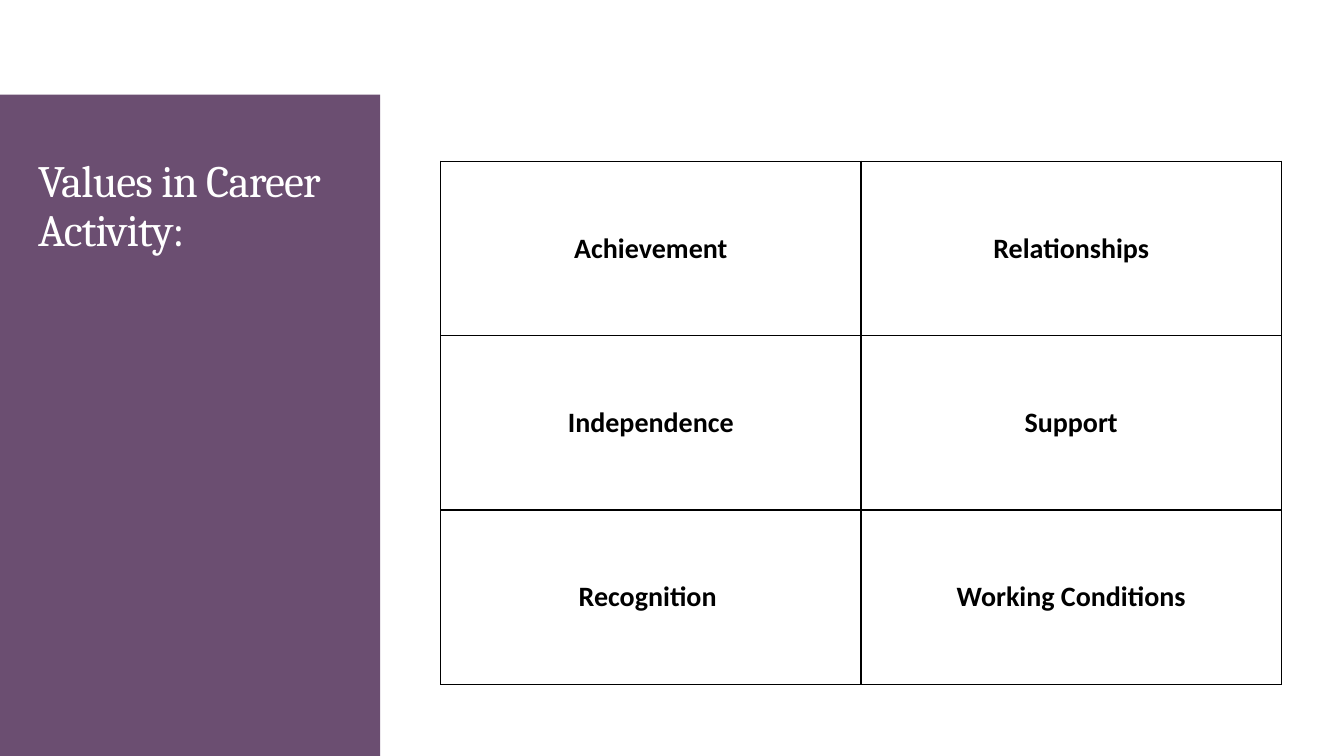
from lxml import etree
from pptx import Presentation
from pptx.dml.color import RGBColor
from pptx.enum.shapes import MSO_SHAPE
from pptx.enum.text import MSO_ANCHOR, PP_ALIGN
from pptx.oxml.ns import qn
from pptx.util import Inches, Pt

TITLE = "Values in Career Activity:"
VALUES = [
    ("Achievement", "Relationships"),
    ("Independence", "Support"),
    ("Recognition ", "Working Conditions"),
]

PURPLE = RGBColor(0x6B, 0x4E, 0x71)
WHITE = RGBColor(0xFF, 0xFF, 0xFF)
BLACK = RGBColor(0x00, 0x00, 0x00)
RECTANGLE = MSO_SHAPE.RECTANGLE
MIDDLE = MSO_ANCHOR.MIDDLE
CENTER = PP_ALIGN.CENTER

SLIDE_WIDTH, SLIDE_HEIGHT = 13.33, 7.5
PANEL = (0, 0.94, 3.77, 6.56)
TITLE_BOX = (0.28, 1.53, 3.22, 5.53)
TABLE_LEFT, TABLE_TOP = 4.37, 1.6
COLUMN_WIDTH, ROW_HEIGHT = 4.17, 1.73


def style_font(font, name, size, color, bold=False):
    """Set the typeface, size, colour and weight of a font."""
    font.name = name
    font.size = Pt(size)
    font.color.rgb = color
    font.bold = bold


def add_borders(cell):
    """Draw a thin black line on all four sides of a cell."""
    properties = cell._tc.get_or_add_tcPr()
    for index, side in enumerate(("a:lnL", "a:lnR", "a:lnT", "a:lnB")):
        line = etree.Element(qn(side), w=str(Pt(1)))
        fill = etree.SubElement(line, qn("a:solidFill"))
        etree.SubElement(fill, qn("a:srgbClr"), val=str(BLACK))
        properties.insert(index, line)


def add_title_panel(slide):
    """Add the purple side panel with the title on it."""
    panel = slide.shapes.add_shape(RECTANGLE, *map(Inches, PANEL))
    panel.shadow.inherit = False
    panel.fill.solid()
    panel.fill.fore_color.rgb = PURPLE
    panel.line.fill.background()

    box = slide.shapes.add_textbox(*map(Inches, TITLE_BOX))
    box.text_frame.word_wrap = True
    box.text_frame.text = TITLE
    para = box.text_frame.paragraphs[0]
    para.line_spacing = 0.9
    span = para.runs[0]
    style_font(span.font, "Cambria", 32, WHITE)
    span._r.get_or_add_rPr().set("spc", "-60")


def add_values_table(slide):
    """Add the bordered grid of career values."""
    row_count, column_count = len(VALUES), len(VALUES[0])
    frame = slide.shapes.add_table(
        row_count, column_count, Inches(TABLE_LEFT), Inches(TABLE_TOP),
        Inches(column_count * COLUMN_WIDTH), Inches(row_count * ROW_HEIGHT))
    table = frame.table
    table.first_row = False
    table.horz_banding = False
    for row, names in enumerate(VALUES):
        for column, name in enumerate(names):
            cell = table.cell(row, column)
            cell.text_frame.text = name
            cell.vertical_anchor = MIDDLE
            cell.fill.background()
            add_borders(cell)
            para = cell.text_frame.paragraphs[0]
            para.alignment = CENTER
            style_font(para.runs[0].font, "Calibri", 20, BLACK, True)


def main():
    """Build the slide and save the deck."""
    deck = Presentation()
    deck.slide_width = Inches(SLIDE_WIDTH)
    deck.slide_height = Inches(SLIDE_HEIGHT)
    slide = deck.slides.add_slide(deck.slide_layouts[6])
    add_title_panel(slide)
    add_values_table(slide)
    deck.save("out.pptx")


if __name__ == "__main__":
    main()
